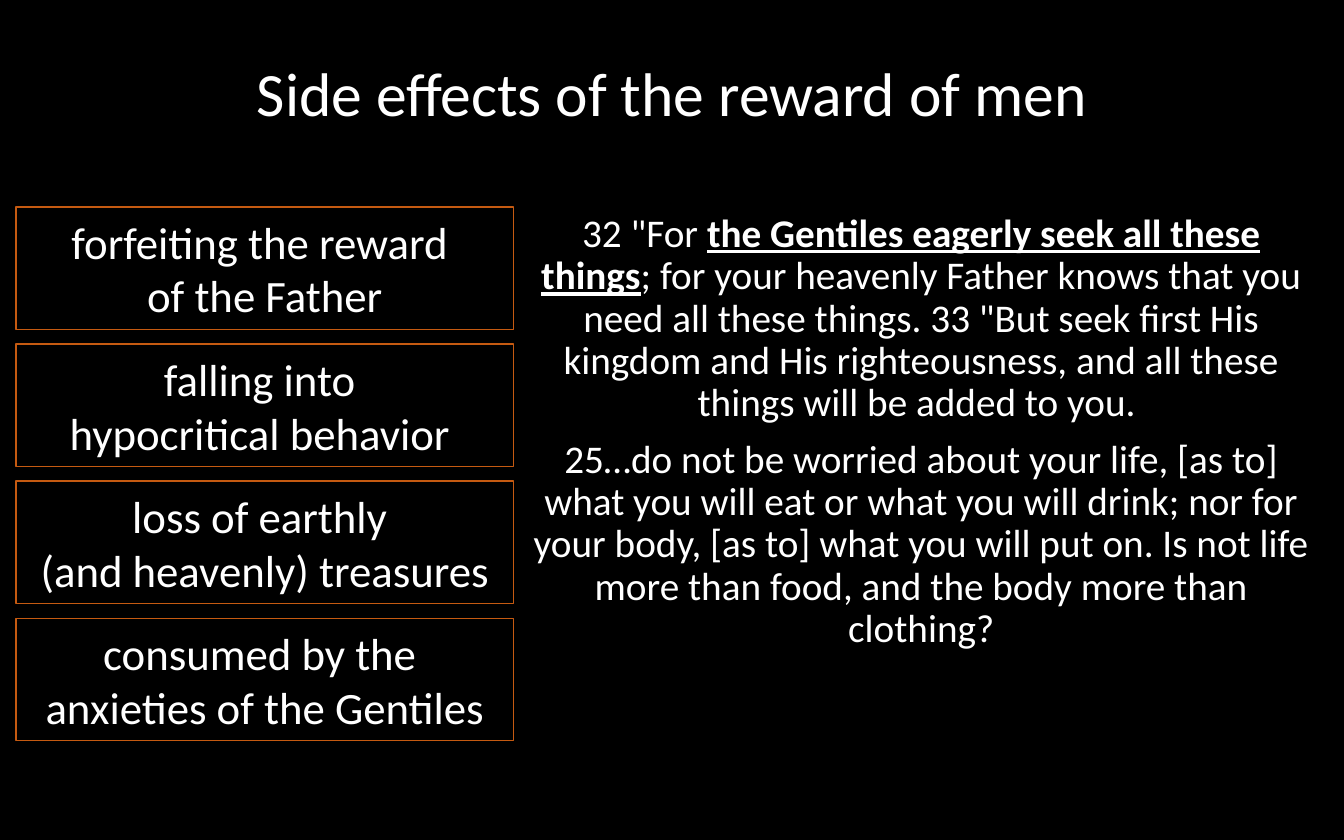
from dataclasses import dataclass

import pptx
import pptx.dml.color
import pptx.enum.shapes
import pptx.enum.text
import pptx.util

BLACK = pptx.dml.color.RGBColor(0x00, 0x00, 0x00)
WHITE = pptx.dml.color.RGBColor(0xFF, 0xFF, 0xFF)
ORANGE = pptx.dml.color.RGBColor(0xC5, 0x5A, 0x11)
FONT = "Calibri"

SLIDE_WIDTH = pptx.util.Inches(10)
SLIDE_HEIGHT = pptx.util.Inches(6.25)


@dataclass(frozen=True)
class Area:
    """A rectangle in percent of the slide's width and height."""
    left: float
    top: float
    width: float
    height: float

    def lengths(self) -> tuple[int, int, int, int]:
        return (
            round(SLIDE_WIDTH * self.left / 100),
            round(SLIDE_HEIGHT * self.top / 100),
            round(SLIDE_WIDTH * self.width / 100),
            round(SLIDE_HEIGHT * self.height / 100),
        )


@dataclass(frozen=True)
class Run:
    text: str
    emphasized: bool = False


@dataclass(frozen=True)
class TextStyle:
    size: float
    anchor: pptx.enum.text.MSO_ANCHOR = pptx.enum.text.MSO_ANCHOR.MIDDLE
    line_spacing: float = 1.0
    space_between: float = 0


Paragraphs = list[list[Run]]

TITLE_AREA = Area(6.9, 1.76, 86.2, 19.36)
VERSES_AREA = Area(38.2, 24.64, 60.7, 75.36)
FIRST_EFFECT_AREA = Area(1.2, 24.64, 37, 14.56)
EFFECT_PITCH = 16.32

TITLE_STYLE = TextStyle(33, line_spacing=0.9)
VERSES_STYLE = TextStyle(21, pptx.enum.text.MSO_ANCHOR.TOP, 0.9, 7.5)
EFFECT_STYLE = TextStyle(24)

TITLE: Paragraphs = [[Run("Side effects of the reward of men")]]
VERSES: Paragraphs = [
    [
        Run('32 "For '),
        Run("the Gentiles eagerly seek all these things", emphasized=True),
        Run("; for your heavenly Father knows that you need all these things. "
            '33 "But seek first His kingdom and His righteousness, and all '
            "these things will be added to you. "),
    ],
    [
        Run("25…do not be worried about your life, [as to] what you will eat "
            "or what you will drink; nor for your body, [as to] what you will "
            "put on. Is not life more than food, and the body more than "
            "clothing?"),
    ],
]
EFFECTS = [
    ("forfeiting the reward ", "of the Father"),
    ("falling into ", "hypocritical behavior "),
    ("loss of earthly ", "(and heavenly) treasures"),
    ("consumed by the ", "anxieties of the Gentiles"),
]


def write_text(shape, paragraphs: Paragraphs, style: TextStyle) -> None:
    frame = shape.text_frame
    frame.word_wrap = True
    frame.vertical_anchor = style.anchor
    for index, runs in enumerate(paragraphs):
        paragraph = frame.add_paragraph() if index else frame.paragraphs[0]
        paragraph.alignment = pptx.enum.text.PP_ALIGN.CENTER
        paragraph.line_spacing = style.line_spacing
        if index:
            paragraph.space_before = pptx.util.Pt(style.space_between)
        paragraph.font.name = FONT
        paragraph.font.size = pptx.util.Pt(style.size)
        paragraph.font.color.rgb = WHITE
        for part in runs:
            run = paragraph.add_run()
            run.text = part.text
            if part.emphasized:
                run.font.bold = True
                run.font.underline = True


def add_text(slide, area: Area, paragraphs: Paragraphs, style: TextStyle) -> None:
    write_text(slide.shapes.add_textbox(*area.lengths()), paragraphs, style)


def add_effect(slide, row: int, lines: tuple[str, str]) -> None:
    first = FIRST_EFFECT_AREA
    area = Area(first.left, first.top + row * EFFECT_PITCH, first.width, first.height)
    shape = slide.shapes.add_shape(
        pptx.enum.shapes.MSO_SHAPE.RECTANGLE, *area.lengths()
    )
    shape.shadow.inherit = False
    shape.fill.background()
    shape.line.color.rgb = ORANGE
    shape.line.width = pptx.util.Pt(0.75)
    write_text(shape, [[Run(line)] for line in lines], EFFECT_STYLE)


def main() -> None:
    presentation = pptx.Presentation()
    presentation.slide_width = SLIDE_WIDTH
    presentation.slide_height = SLIDE_HEIGHT
    slide = presentation.slides.add_slide(presentation.slide_layouts[6])
    slide.background.fill.solid()
    slide.background.fill.fore_color.rgb = BLACK

    add_text(slide, TITLE_AREA, TITLE, TITLE_STYLE)
    add_text(slide, VERSES_AREA, VERSES, VERSES_STYLE)
    for row, lines in enumerate(EFFECTS):
        add_effect(slide, row, lines)

    presentation.save("out.pptx")


if __name__ == "__main__":
    main()
